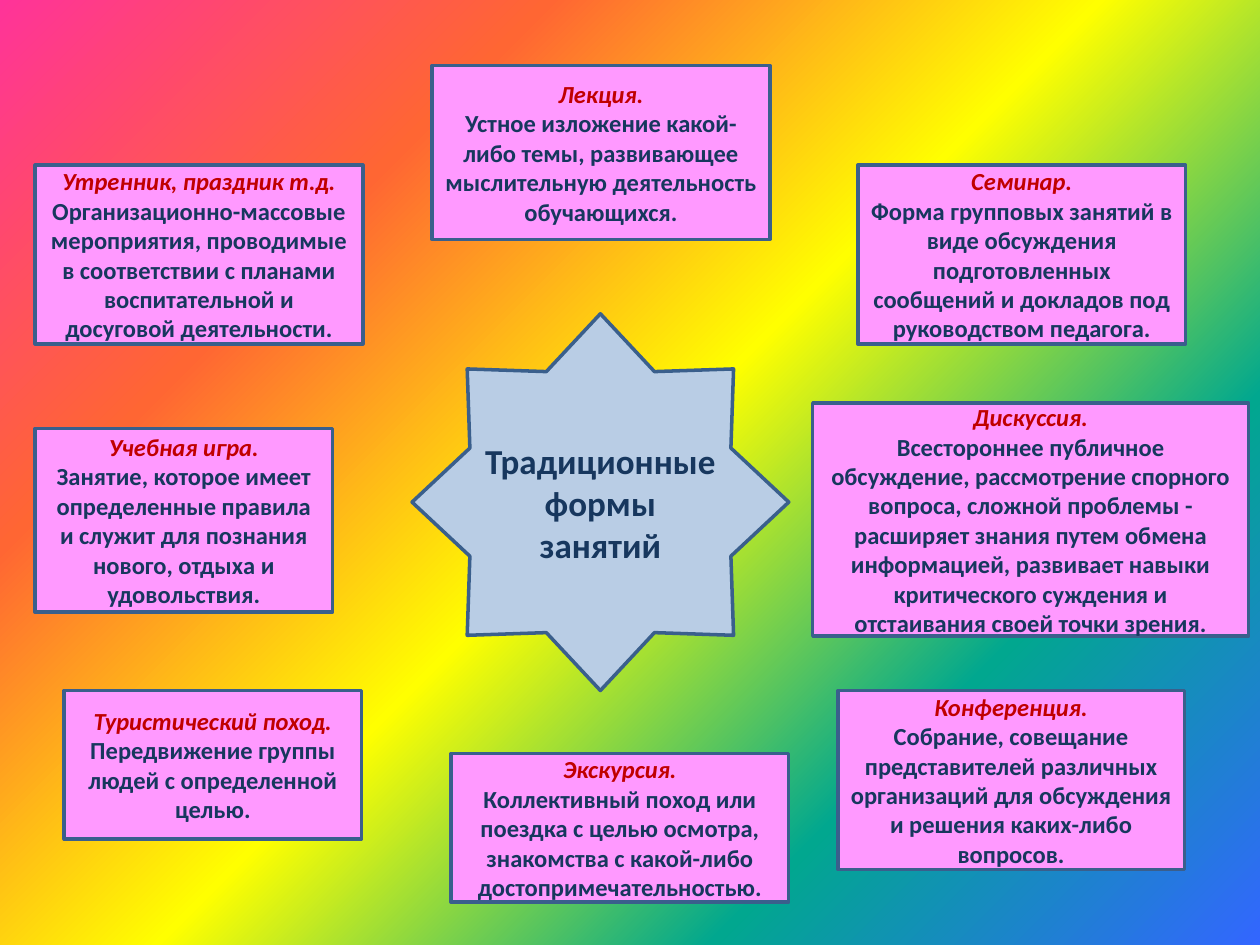
from copy import deepcopy

from pptx import Presentation
from pptx import util as u
from pptx.dml.color import RGBColor
from pptx.enum import shapes, text
from pptx.oxml.ns import qn

COLS, ROWS = 100, 75
CELL = u.Inches(10) // COLS
FONT = "Calibri"
NAVY, RED, EDGE = "17375E", "C00000", "3A5F8C"
PINK, PALE = "FF99FF", "B9CDE5"
RAINBOW = ["FF3399", "FF6633", "FFFF00", "01A78F", "3366FF"]

CARDS = [
    (34.3, 5.2, 26.8, 13.8, "Лекция.",
     "Устное изложение какой-либо темы, развивающее мыслительную "
     "деятельность обучающихся."),
    (5.1, 54.8, 23.6, 11.8, "Туристический поход.",
     "Передвижение группы людей с определенной целью."),
    (2.8, 34, 23.6, 14.6, "Учебная игра.",
     "Занятие, которое имеет определенные правила и служит для познания "
     "нового, отдыха и удовольствия."),
    (2.8, 13.1, 26, 14.2, "Утренник, праздник т.д.",
     "Организационно-массовые мероприятия, проводимые в соответствии с "
     "планами воспитательной и досуговой деятельности."),
    (68.1, 13.1, 26, 14.2, "Семинар.",
     "Форма групповых занятий в виде обсуждения подготовленных сообщений "
     "и докладов под руководством педагога."),
    (64.5, 32, 34.6, 18.5, "Дискуссия.",
     "Всестороннее публичное обсуждение, рассмотрение спорного вопроса, "
     "сложной проблемы - расширяет знания путем обмена информацией, "
     "развивает навыки критического суждения и отстаивания своей точки "
     "зрения."),
    (66.5, 54.8, 27.5, 14.2, "Конференция.",
     "Собрание, совещание представителей различных организаций для "
     "обсуждения и решения каких-либо вопросов."),
    (35.8, 59.8, 26.8, 11.8, "Экскурсия.",
     "Коллективный поход или поездка с целью осмотра, знакомства с "
     "какой-либо достопримечательностью."),
]


def paint(color, code):
    """Set a colour from a hex string."""
    color.rgb = RGBColor.from_string(code)


def backdrop(slide, codes):
    """Fill the background with evenly spaced diagonal colour stops."""
    fill = slide.background.fill
    fill.gradient()
    fill.gradient_angle = 315
    stops = next(slide.element.iter(qn("a:gsLst")))
    for _ in codes[2:]:
        stops.append(deepcopy(stops[0]))
    for i, (stop, code) in enumerate(zip(fill.gradient_stops, codes)):
        stop.position = i / (len(codes) - 1)
        paint(stop.color, code)


def figure(slide, kind, box, code):
    """Add an outlined shape at grid lengths and return its text frame."""
    shape = slide.shapes.add_shape(kind, *(int(n * CELL) for n in box))
    shape.shadow.inherit = False
    shape.fill.solid()
    paint(shape.fill.fore_color, code)
    paint(shape.line.color, EDGE)
    shape.line.width = u.Pt(2)
    frame = shape.text_frame
    frame.word_wrap = True
    frame.vertical_anchor = text.MSO_ANCHOR.MIDDLE
    return frame


def write(para, words, size, code, slant=False):
    """Add one bold run to a centred paragraph."""
    para.alignment = text.PP_ALIGN.CENTER
    run = para.add_run()
    run.text = words
    font = run.font
    font.name, font.size = FONT, u.Pt(size)
    font.bold, font.italic = True, slant
    paint(font.color, code)


def card(slide, box, title, body):
    """Add a pink card with a red title over its description."""
    frame = figure(slide, shapes.MSO_SHAPE.RECTANGLE, box, PINK)
    write(frame.paragraphs[0], title, 14, RED, slant=True)
    write(frame.add_paragraph(), body, 14, NAVY)


def star(slide, box, title):
    """Add the central star with the topic."""
    frame = figure(slide, shapes.MSO_SHAPE.STAR_8_POINT, box, PALE)
    write(frame.paragraphs[0], title, 20, NAVY)


def main():
    """Build and save the slide."""
    deck = Presentation()
    deck.slide_width, deck.slide_height = COLS * CELL, ROWS * CELL
    slide = deck.slides.add_slide(deck.slide_layouts[6])
    backdrop(slide, RAINBOW)
    star(slide, (32.7, 24.9, 29.9, 29.9), "Традиционные формы занятий")
    for *box, title, body in CARDS:
        card(slide, box, title, body)
    deck.save("out.pptx")


if __name__ == "__main__":
    main()
